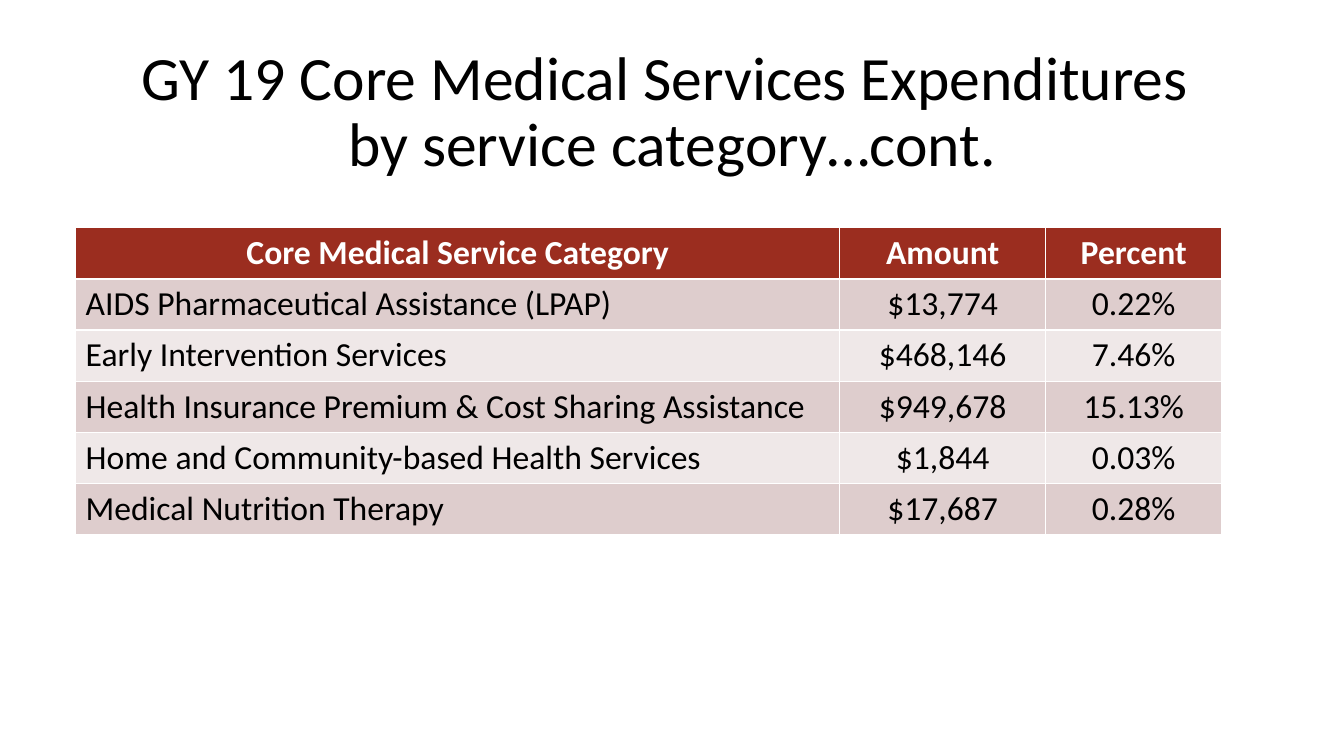
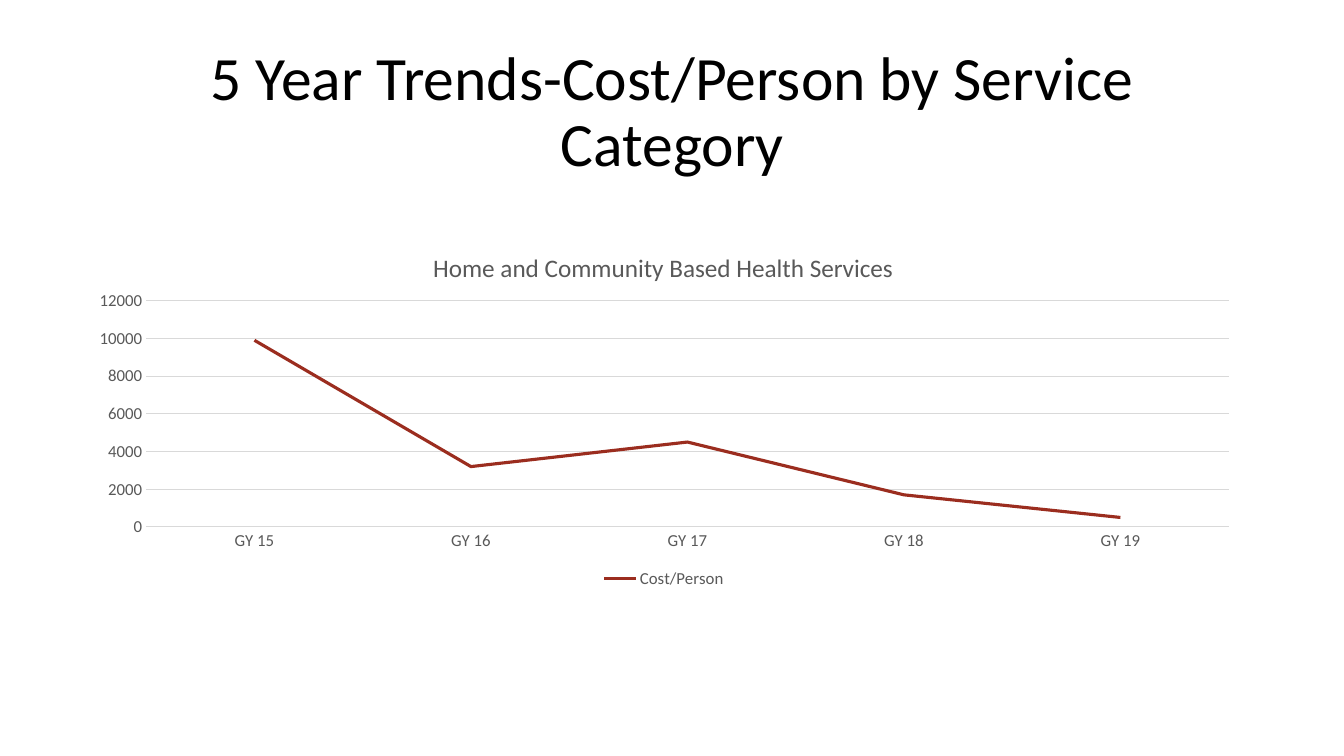
from pptx import Presentation
from pptx.chart.data import CategoryChartData
from pptx.dml.color import RGBColor
from pptx.enum.chart import XL_CHART_TYPE as ChartType, XL_LEGEND_POSITION as LegendPosition
from pptx.enum.chart import XL_MARKER_STYLE as MarkerStyle, XL_TICK_MARK as TickMark
from pptx.enum.text import MSO_ANCHOR as Anchor, MSO_AUTO_SIZE as AutoSize, PP_ALIGN as Align
from pptx.oxml import parse_xml
from pptx.oxml.ns import nsdecls
from pptx.util import Inches, Pt

FONT = "Calibri"
BRICK, ROSE, BLUSH = "9B2D1F", "DECDCD", "EFE8E8"
BLACK, WHITE, GRAY, RULE = "000000", "FFFFFF", "595959", "D9D9D9"
TITLE_BOX = (0.92, 0.4, 11.5, 1.45)
TABLE_BOX = (0.75, 2.26, 11.37, 3.04)
CHART_BOX = (0.75, 2.26, 11.67, 3.62)
COLUMN_SHARES = (7.58, 2.04, 1.75)

EXPENDITURES = (
    ("Core Medical Service Category", "Amount", "Percent"),
    ("AIDS Pharmaceutical Assistance (LPAP)", "$13,774", "0.22%"),
    ("Early Intervention Services", "$468,146", "7.46%"),
    ("Health Insurance Premium & Cost Sharing Assistance", "$949,678", "15.13%"),
    ("Home and Community-based Health Services", "$1,844", "0.03%"),
    ("Medical Nutrition Therapy", "$17,687", "0.28%"),
)
COST_PER_PERSON = {"GY 15": 9900, "GY 16": 3200, "GY 17": 4500, "GY 18": 1700, "GY 19": 500}


def paint(target, color):
    target.solid()
    target.fore_color.rgb = RGBColor.from_string(color)


def style_font(font, size, color, bold=False):
    font.name, font.size, font.bold = FONT, Pt(size), bold
    paint(font.fill, color)


def style_line(line, color, width):
    paint(line.fill, color)
    line.width = Pt(width)


def add_page(deck, title):
    page = deck.slides.add_slide(deck.slide_layouts[5])
    box = page.shapes.title
    box.left, box.top, box.width, box.height = map(Inches, TITLE_BOX)
    frame = box.text_frame
    frame.text = title
    frame.word_wrap, frame.auto_size = True, AutoSize.NONE
    frame.vertical_anchor = Anchor.MIDDLE
    para = frame.paragraphs[0]
    para.alignment, para.line_spacing = Align.CENTER, 0.9
    for span in para.runs:
        style_font(span.font, 44, BLACK)
    return page


def add_expenditure_table(page, box, rows):
    frame = page.shapes.add_table(len(rows), len(COLUMN_SHARES), *map(Inches, box))
    table = frame.table
    for column, share in zip(table.columns, COLUMN_SHARES):
        column.width = Inches(box[2] * share / sum(COLUMN_SHARES))
    for row_index, row in enumerate(rows):
        header = row_index == 0
        fill = BRICK if header else (BLUSH, ROSE)[row_index % 2]
        for column_index, text in enumerate(row):
            cell = table.cell(row_index, column_index)
            cell.text_frame.text = text
            paint(cell.fill, fill)
            para = cell.text_frame.paragraphs[0]
            para.alignment = Align.CENTER if header or column_index else Align.LEFT
            style_font(para.runs[0].font, 24, WHITE if header else BLACK, header)


def set_layout(parent, x, y, width=None, height=None):
    parts = '<c:xMode val="edge"/><c:yMode val="edge"/>' + f'<c:x val="{x}"/><c:y val="{y}"/>'
    target = ""
    if width:
        target = '<c:layoutTarget val="inner"/>'
        parts += f'<c:w val="{width}"/><c:h val="{height}"/>'
    layout = parse_xml(
        f'<c:layout {nsdecls("c")}><c:manualLayout>{target}{parts}</c:manualLayout></c:layout>'
    )
    for old in parent.xpath("c:layout"):
        parent.remove(old)
    texts = parent.xpath("c:tx")
    if texts:
        texts[0].addnext(layout)
    else:
        parent.insert(0, layout)


def style_axis(axis):
    axis.major_tick_mark = axis.minor_tick_mark = TickMark.NONE
    style_font(axis.tick_labels.font, 12, GRAY)


def add_trend_chart(page, box, title, name, points):
    data = CategoryChartData()
    data.categories = list(points)
    data.add_series(name, list(points.values()))
    chart = page.shapes.add_chart(ChartType.LINE, *map(Inches, box), data).chart
    style_font(chart.font, 10, BLACK)

    chart.has_title = True
    chart.chart_title.text_frame.text = title
    style_font(chart.chart_title.text_frame.paragraphs[0].runs[0].font, 18, GRAY)
    chart.chart_title.include_in_layout = False

    chart.has_legend = True
    chart.legend.position = LegendPosition.BOTTOM
    chart.legend.include_in_layout = False
    style_font(chart.legend.font, 12, GRAY)

    style_axis(chart.category_axis)
    style_line(chart.category_axis.format.line, RULE, 0.75)
    values = chart.value_axis
    style_axis(values)
    values.minimum_scale, values.maximum_scale, values.major_unit = 0, 12000, 2000
    values.format.line.fill.background()
    style_line(values.major_gridlines.format.line, RULE, 0.75)

    plot = chart.plots[0]
    plot.vary_by_categories = False
    series = plot.series[0]
    series.smooth = False
    series.marker.style = MarkerStyle.NONE
    style_line(series.format.line, BRICK, 2.25)

    chart_xml = chart.element
    set_layout(chart_xml.xpath("c:chart/c:title")[0], 0.3, 0.05)
    set_layout(chart_xml.xpath("c:chart/c:plotArea")[0], 0.06, 0.2, 0.92, 0.62)


def main():
    deck = Presentation()
    deck.slide_width, deck.slide_height = Inches(13.33), Inches(7.5)

    page = add_page(deck, "GY 19 Core Medical Services Expenditures \vby service category…cont.")
    add_expenditure_table(page, TABLE_BOX, EXPENDITURES)

    page = add_page(deck, "5 Year Trends-Cost/Person by Service Category")
    add_trend_chart(
        page, CHART_BOX, "Home and Community Based Health Services", "Cost/Person", COST_PER_PERSON
    )

    deck.save("out.pptx")


if __name__ == "__main__":
    main()
